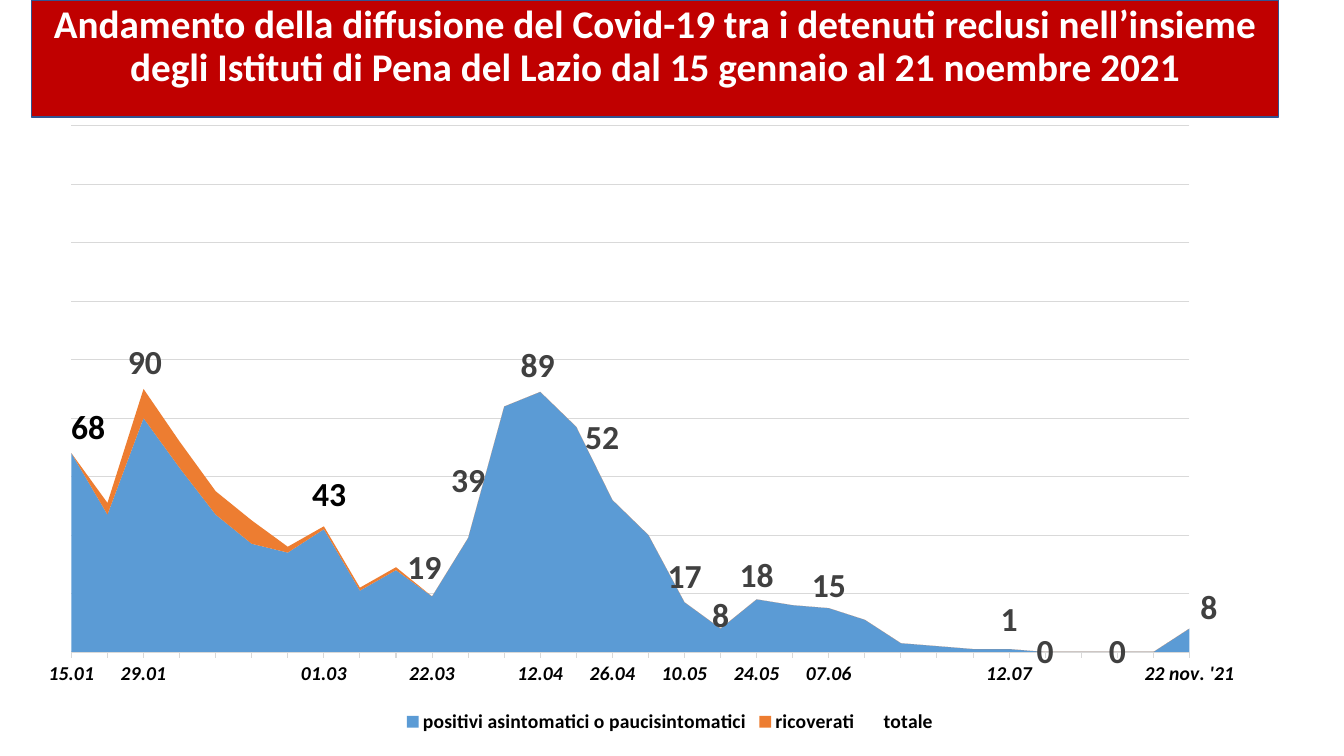
import pptx
import pptx.chart.data
import pptx.dml.color
import pptx.enum.chart
import pptx.enum.shapes
import pptx.enum.text
import pptx.oxml
import pptx.oxml.ns
import pptx.util


def paint(target, color):
    """Give a fill or a font a solid hex colour."""
    if hasattr(target, "solid"):
        target.solid()
        target = target.fore_color
    else:
        target = target.color
    target.rgb = pptx.dml.color.RGBColor.from_string(color)


def manual_layout(x, y, size=None):
    """Build a c:layout: a label offset, or an inner plot area when size is given."""
    target = '<c:layoutTarget val="inner"/>' if size else ""
    modes = '<c:xMode val="edge"/><c:yMode val="edge"/>' if size else ""
    extent = '<c:w val="%s"/><c:h val="%s"/>' % size if size else ""
    return pptx.oxml.parse_xml(
        f'<c:layout {pptx.oxml.ns.nsdecls("c")}><c:manualLayout>{target}{modes}'
        f'<c:x val="{x}"/><c:y val="{y}"/>{extent}</c:manualLayout></c:layout>')


prs = pptx.Presentation()
prs.slide_width, prs.slide_height = pptx.util.Inches(13.33), pptx.util.Inches(7.5)
s = prs.slides.add_slide(prs.slide_layouts[6])

# Title band
sp = s.shapes.add_shape(pptx.enum.shapes.MSO_SHAPE.RECTANGLE,
                        *map(pptx.util.Inches, (0.31, 0, 12.37, 1.16)))
sp.shadow.inherit = False
paint(sp.fill, "C00000")
paint(sp.line.fill, "325491")
sp.line.width = pptx.util.Pt(1)
tf = sp.text_frame
tf.word_wrap = True
tf.vertical_anchor = pptx.enum.text.MSO_ANCHOR.TOP
p = tf.paragraphs[0]
p.alignment = pptx.enum.text.PP_ALIGN.CENTER
p.line_spacing = 0.9
r = p.add_run()
r.text = ("Andamento della diffusione del Covid-19 tra i detenuti reclusi "
          "nell’insieme degli Istituti di Pena del Lazio dal 15 gennaio al 21 noembre 2021")
for name, value in dict(name="Calibri", size=pptx.util.Pt(28), bold=True).items():
    setattr(r.font, name, value)
paint(r.font, "FFFFFF")

# Weekly figures; only some weeks carry a date
dates = {0: "15.01", 2: "29.01", 7: "01.03", 10: "22.03", 13: "12.04", 15: "26.04",
         17: "10.05", 19: "24.05", 21: "07.06", 26: "12.07", 31: "22 nov. '21"}
positive = [68, 47, 80, 63, 47, 37, 34, 42, 21, 28, 19, 39, 84, 89, 77, 52,
            40, 17, 8, 18, 16, 15, 11, 3, 2, 1, 1, 0, 0, 0, 0, 8]
hospital = [0, 4, 10, 9, 8, 8, 2, 1, 1, 1, 0, 0] + [None] * 20
total = [a + (b or 0) for a, b in zip(positive, hospital)]

data = pptx.chart.data.CategoryChartData()
data.categories = [dates.get(week, "") for week in range(len(positive))]
data.add_series("positivi asintomatici o paucisintomatici", positive)
data.add_series("ricoverati", hospital)
data.add_series("totale", total)
chart = s.shapes.add_chart(pptx.enum.chart.XL_CHART_TYPE.AREA_STACKED,
                           *map(pptx.util.Inches, (0.22, 0.97, 12.85, 6.35)), data).chart
chart.has_title = False
chart.has_legend = True
chart.legend.position = pptx.enum.chart.XL_LEGEND_POSITION.BOTTOM
chart.legend.include_in_layout = False

plot_area = chart.plots[0]._element.getparent()
for old in plot_area.xpath("c:layout"):
    plot_area.remove(old)
plot_area.insert(0, manual_layout(0.038, 0.044, (0.863, 0.822)))

dates_axis, values_axis = chart.category_axis, chart.value_axis
dates_axis.has_major_gridlines = False
dates_axis.major_tick_mark = pptx.enum.chart.XL_TICK_MARK.OUTSIDE
dates_axis.tick_label_position = pptx.enum.chart.XL_TICK_LABEL_POSITION.LOW
for name, value in dict(visible=False, minimum_scale=0, maximum_scale=180,
                        major_unit=20, has_major_gridlines=True).items():
    setattr(values_axis, name, value)
for cross in plot_area.xpath("c:valAx/c:crossBetween"):
    cross.set("val", "midCat")
for line in (dates_axis.format.line, values_axis.major_gridlines.format.line):
    paint(line.fill, "D9D9D9")
    line.width = pptx.util.Pt(0.75)

for font, size, bold, italic in ((chart.font, 10, False, False),
                                 (chart.legend.font, 14, True, False),
                                 (dates_axis.tick_labels.font, 14, True, True)):
    for name, value in dict(name="Calibri", size=pptx.util.Pt(size),
                            bold=bold, italic=italic).items():
        setattr(font, name, value)
    paint(font, "000000")

positive_area, hospital_area, total_area = chart.plots[0].series
paint(positive_area.format.fill, "5B9BD5")
paint(hospital_area.format.fill, "ED7D31")
total_area.format.fill.background()
total_area.format.line.fill.background()

# Labelled weeks and how far each label is moved, as shares of the chart
label_offsets = {0: (0.013, 0.117), 2: (0.001, 0.166), 7: (0.004, 0.05),
                 10: (-0.006, 0), 11: (0, 0), 13: (-0.002, 0.164),
                 15: (-0.008, 0.022), 17: (0, 0), 18: (0, 0), 19: (0, 0.005),
                 21: (0, 0), 26: (0, -0.042), 27: (0, 0), 29: (0, 0),
                 31: (0.015, -0.014)}
labels = total_area.data_labels
labels.show_value = False
for leader in labels._element.xpath("c:showLeaderLines"):
    leader.set("val", "0")
for week in label_offsets:
    font = total_area.points[week].data_label.font
    for name, value in dict(name="Calibri", size=pptx.util.Pt(24), bold=True).items():
        setattr(font, name, value)
    paint(font, "000000" if week in (0, 7) else "404040")
for label, offset in zip(labels._element.xpath("c:dLbl"), label_offsets.values()):
    if any(offset):
        label.insert(1, manual_layout(*offset))

prs.save("out.pptx")
